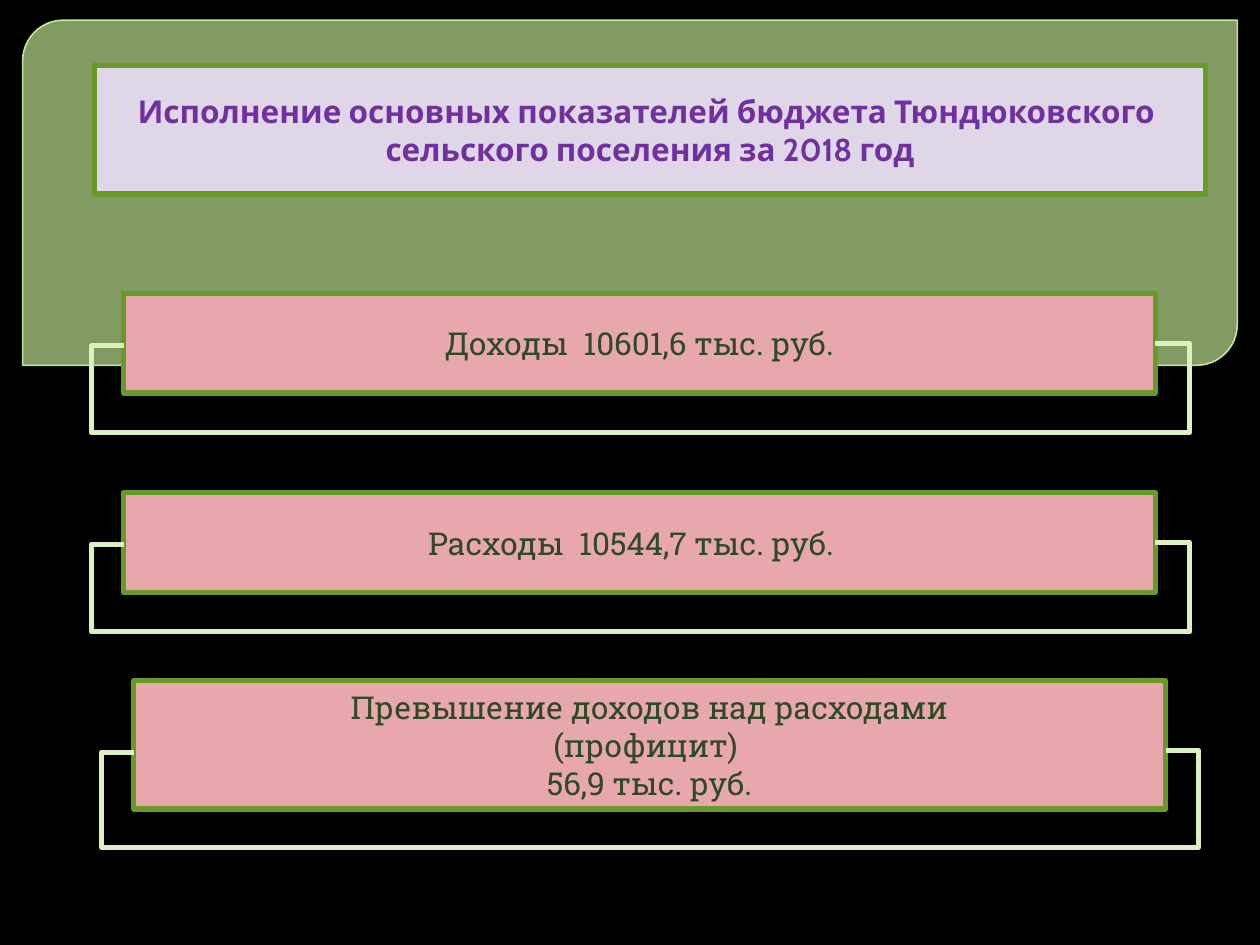
from lxml.etree import SubElement
from pptx import Presentation
from pptx.dml.color import RGBColor
from pptx.enum.shapes import MSO_CONNECTOR, MSO_SHAPE
from pptx.enum.text import MSO_ANCHOR, PP_ALIGN
from pptx.oxml.ns import qn
from pptx.util import Inches, Pt

BLACK = RGBColor(0x00, 0x00, 0x00)
PANEL_GREEN = RGBColor(0xC7, 0xEF, 0x97)
PANEL_EDGE = RGBColor(0xD5, 0xFF, 0xA4)
FRAME_GREEN = RGBColor(0x68, 0x9B, 0x25)
BRACKET_GREEN = RGBColor(0xDC, 0xF1, 0xC2)
PINK = RGBColor(0xE8, 0xA6, 0xAD)
LILAC = RGBColor(0xDF, 0xD7, 0xE7)
DARK_GREEN = RGBColor(0x2C, 0x4A, 0x25)
PURPLE = RGBColor(0x70, 0x30, 0xA0)

BAR_WIDTH = 8.19
BRACKET_RISE = 1 / 72  # the right end sits one point above the left end

# Lines of text, bar left, top, height, bracket start below bar top,
# bracket depth, bracket reach to the right, extra right inset
INDICATORS = [
    (["Доходы  10601,6 тыс. руб."], 0.98, 2.33, 0.79, 0.41, 0.7, 0.27, 0),
    (["Расходы  10544,7 тыс. руб."], 0.98, 3.91, 0.79, 0.41, 0.7, 0.27, 0.13),
    (["Превышение доходов над расходами", "(профицит) ", "56,9 тыс. руб."],
     1.06, 5.4, 1.02, 0.57, 0.76, 0.26, 0),
]


def set_alpha(color_parent, percent):
    color = color_parent.find(".//" + qn("a:srgbClr"))
    SubElement(color, qn("a:alpha")).set("val", str(percent * 1000))


def add_panel(slide, left, top, width, height):
    """Translucent panel with two rounded corners behind the heading."""
    panel = slide.shapes.add_shape(
        MSO_SHAPE.ROUND_2_DIAG_RECTANGLE,
        Inches(left), Inches(top), Inches(width), Inches(height))
    panel.shadow.inherit = False
    panel.adjustments[0] = 0.118
    panel.adjustments[1] = 0
    panel.fill.solid()
    panel.fill.fore_color.rgb = PANEL_GREEN
    panel.line.color.rgb = PANEL_EDGE
    panel.line.width = Pt(0.87)
    properties = panel._element.spPr
    set_alpha(properties.find(qn("a:solidFill")), 65)
    set_alpha(properties.find(qn("a:ln")), 88)


def add_framed_text(slide, box, lines, fill, color, font, bold=False, inset=0):
    """Framed rectangle with centred lines of text."""
    frame = slide.shapes.add_shape(
        MSO_SHAPE.RECTANGLE, *(Inches(value) for value in box))
    frame.shadow.inherit = False
    frame.fill.solid()
    frame.fill.fore_color.rgb = fill
    frame.line.color.rgb = FRAME_GREEN
    frame.line.width = Pt(3)
    text = frame.text_frame
    text.word_wrap = True
    text.vertical_anchor = MSO_ANCHOR.MIDDLE
    text.margin_right = Inches(0.1 + inset)
    for index, line in enumerate(lines):
        paragraph = text.add_paragraph() if index else text.paragraphs[0]
        paragraph.alignment = PP_ALIGN.CENTER
        run = paragraph.add_run()
        run.text = line
        run.font.name = font
        run.font.size = Pt(18)
        run.font.bold = bold
        run.font.color.rgb = color


def add_bracket(slide, left, start, width, depth, reach):
    """Five-part elbow line running round the underside of a bar."""
    bracket = slide.shapes.add_connector(
        MSO_CONNECTOR.ELBOW, Inches(left), Inches(start - BRACKET_RISE),
        Inches(left + width), Inches(start))
    bracket.line.color.rgb = BRACKET_GREEN
    bracket.line.width = Pt(3)
    properties = bracket._element.spPr
    SubElement(properties, qn("a:effectLst"))
    transform = properties.find(qn("a:xfrm"))
    transform.set("rot", "10800000")
    transform.set("flipH", "1")
    geometry = properties.find(qn("a:prstGeom"))
    geometry.set("prst", "bentConnector5")
    guides = geometry.find(qn("a:avLst"))
    if guides is None:
        guides = SubElement(geometry, qn("a:avLst"))
    shares = (-0.25 / width, -depth / BRACKET_RISE, 1 + reach / width)
    for number, share in enumerate(shares, 1):
        guide = SubElement(guides, qn("a:gd"))
        guide.set("name", f"adj{number}")
        guide.set("fmla", f"val {round(share * 100000)}")


def add_indicator(slide, lines, left, top, height, offset, depth, reach, inset):
    add_framed_text(slide, (left, top, BAR_WIDTH, height), lines,
                    PINK, DARK_GREEN, "Roboto Slab", inset=inset)
    add_bracket(slide, left, top + offset, BAR_WIDTH, depth, reach)


def main():
    deck = Presentation()
    deck.slide_width, deck.slide_height = Inches(10), Inches(7.5)
    slide = deck.slides.add_slide(deck.slide_layouts[6])
    slide.background.fill.solid()
    slide.background.fill.fore_color.rgb = BLACK

    # Heading
    add_panel(slide, 0.18, 0.16, 9.64, 2.74)
    add_framed_text(
        slide, (0.75, 0.52, 8.82, 1.02),
        ["Исполнение основных показателей бюджета Тюндюковского ",
         "сельского поселения за 2018 год"],
        LILAC, PURPLE, "Cabin", bold=True)

    # Budget indicators
    for indicator in INDICATORS:
        add_indicator(slide, *indicator)

    deck.save("out.pptx")


if __name__ == "__main__":
    main()
